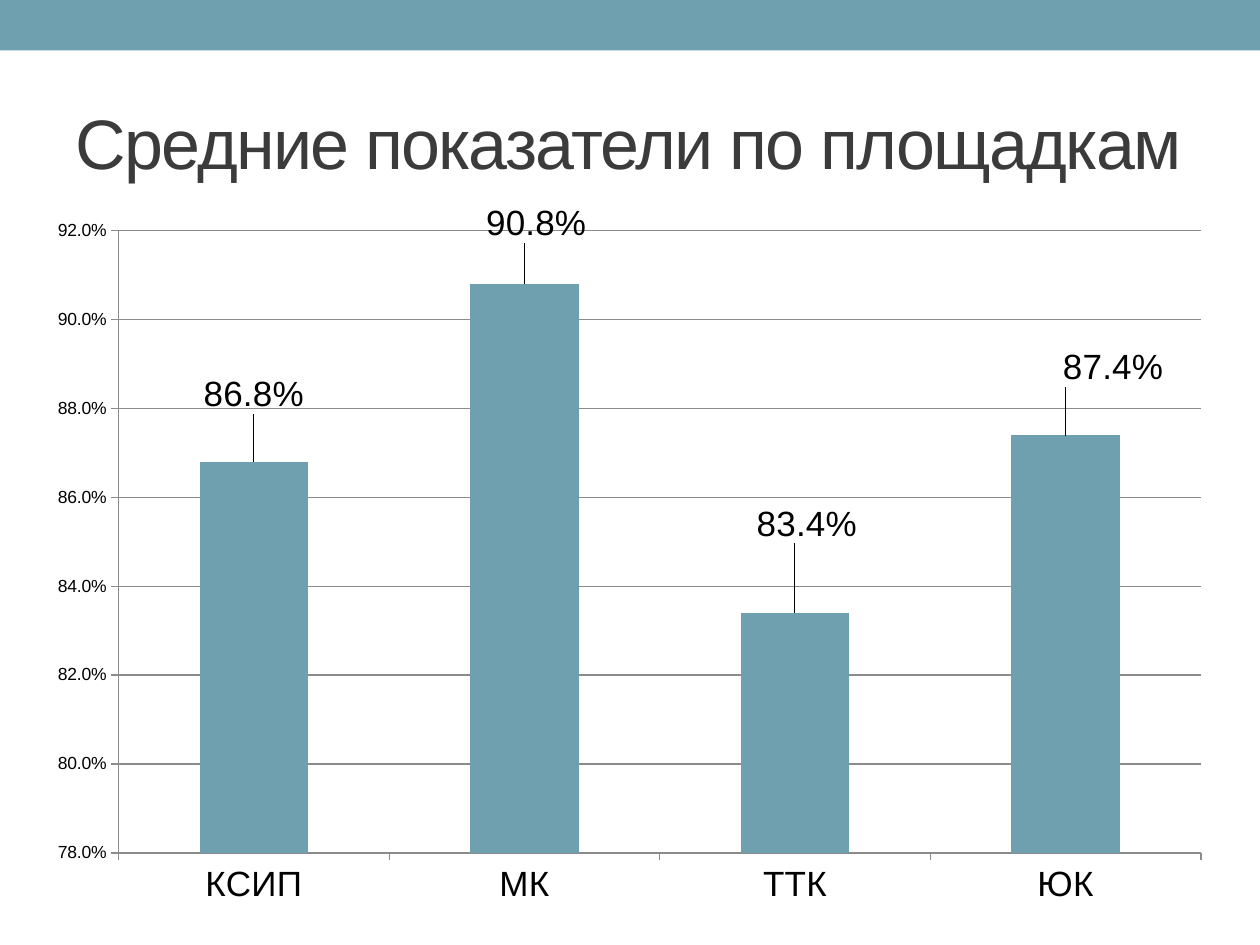
from lxml import etree
from pptx import Presentation, util as u
from pptx.chart.data import CategoryChartData
from pptx.dml.color import RGBColor
from pptx.enum import chart as ch, shapes, text
from pptx.oxml.ns import qn

TEAL = RGBColor(0x6E, 0xA0, 0xB0)
CHARCOAL = RGBColor(0x3B, 0x3B, 0x3B)
BLACK = RGBColor(0, 0, 0)
GRAY = RGBColor(0x8B, 0x8B, 0x8B)

SITES = [
    ("КСИП", 0.868, (0, -0.06)),
    ("МК", 0.908, (0.01, -0.05)),
    ("ТТК", 0.834, (0.01, -0.09)),
    ("ЮК", 0.874, (0.04, -0.06)),
]


def manual_layout(**values):
    layout = etree.Element(qn("c:layout"))
    manual = etree.SubElement(layout, qn("c:manualLayout"))
    for name, value in values.items():
        etree.SubElement(manual, qn(f"c:{name}")).set("val", str(value))
    return layout


class SlideBuilder:
    font = "Arial"
    small, large, heading = u.Pt(10), u.Pt(20), u.Pt(40)
    percent = "0.0%"

    def __init__(self, deck):
        self.width, self.height = deck.slide_width, deck.slide_height
        self.slide = deck.slides.add_slide(deck.slide_layouts[5])

    def area(self, left, top, width, height):
        return (int(left * self.width), int(top * self.height),
                int(width * self.width), int(height * self.height))

    def style(self, font, size, color):
        font.name, font.size, font.bold = self.font, size, False
        font.color.rgb = color

    def band(self, *shares):
        band = self.slide.shapes.add_shape(
            shapes.MSO_SHAPE.RECTANGLE, *self.area(*shares))
        band.shadow.inherit = False
        band.fill.solid()
        band.fill.fore_color.rgb = TEAL
        band.line.fill.background()

    def title(self, wording, *shares):
        box = self.slide.shapes.title
        box.left, box.top, box.width, box.height = self.area(*shares)
        frame = box.text_frame
        frame.text = wording
        frame.word_wrap = True
        frame.vertical_anchor = text.MSO_ANCHOR.MIDDLE
        para = frame.paragraphs[0]
        para.alignment = text.PP_ALIGN.LEFT
        span = para.runs[0]
        self.style(span.font, self.heading, CHARCOAL)
        span.font._element.set("spc", "-100")

    def columns(self, sites, *shares):
        data = CategoryChartData(number_format=self.percent)
        data.categories = [name for name, _, _ in sites]
        data.add_series("Series 1", [value for _, value, _ in sites])
        chart = self.slide.shapes.add_chart(
            ch.XL_CHART_TYPE.COLUMN_CLUSTERED, *self.area(*shares), data).chart
        chart.has_legend = chart.has_title = False
        self.style(chart.font, self.small, BLACK)
        self.axes(chart)
        plot = chart.plots[0]
        plot.vary_by_categories = False
        plot.gap_width = 150
        series = plot.series[0]
        series.format.fill.solid()
        series.format.fill.fore_color.rgb = TEAL
        self.labels(series, [shift for _, _, shift in sites])
        area = chart._chartSpace.find(".//" + qn("c:plotArea"))
        for layout in area.findall(qn("c:layout")):
            area.remove(layout)
        area.insert(0, manual_layout(
            layoutTarget="inner", xMode="edge", yMode="edge",
            x=0.07, y=0.034, w=0.909, h=0.874))

    def axes(self, chart):
        values, names = chart.value_axis, chart.category_axis
        for axis, size in ((values, self.small), (names, self.large)):
            self.style(axis.tick_labels.font, size, BLACK)
            axis.format.line.color.rgb = GRAY
            axis.major_tick_mark = ch.XL_TICK_MARK.OUTSIDE
            axis.minor_tick_mark = ch.XL_TICK_MARK.NONE
        values.minimum_scale, values.maximum_scale = 0.78, 0.92
        values.major_unit = 0.02
        values.has_major_gridlines = True
        values.major_gridlines.format.line.color.rgb = GRAY
        values.tick_labels.number_format = self.percent
        values.tick_labels.number_format_is_linked = False

    def labels(self, series, shifts):
        labels = series.data_labels
        labels.show_value = True
        labels.number_format = self.percent
        labels.number_format_is_linked = False
        labels.position = ch.XL_LABEL_POSITION.OUTSIDE_END
        self.style(labels.font, self.large, BLACK)
        for index in range(len(shifts)):
            label = series.points[index].data_label
            self.style(label.font, self.large, BLACK)
            label.position = ch.XL_LABEL_POSITION.OUTSIDE_END
        for node, (x, y) in zip(series._element.iter(qn("c:dLbl")), shifts):
            node.find(qn("c:idx")).addnext(manual_layout(x=x, y=y))


def main():
    deck = Presentation()
    deck.slide_width, deck.slide_height = u.Inches(10), u.Inches(7.5)
    builder = SlideBuilder(deck)
    builder.band(0, 0, 1, 0.4 / 7.5)
    builder.title("Средние показатели по площадкам", 0.05, 0.58 / 7.5, 0.9, 1.08 / 7.5)
    builder.columns(SITES, 0.028, 1.62 / 7.5, 0.945, 5.67 / 7.5)
    deck.save("out.pptx")


if __name__ == "__main__":
    main()
